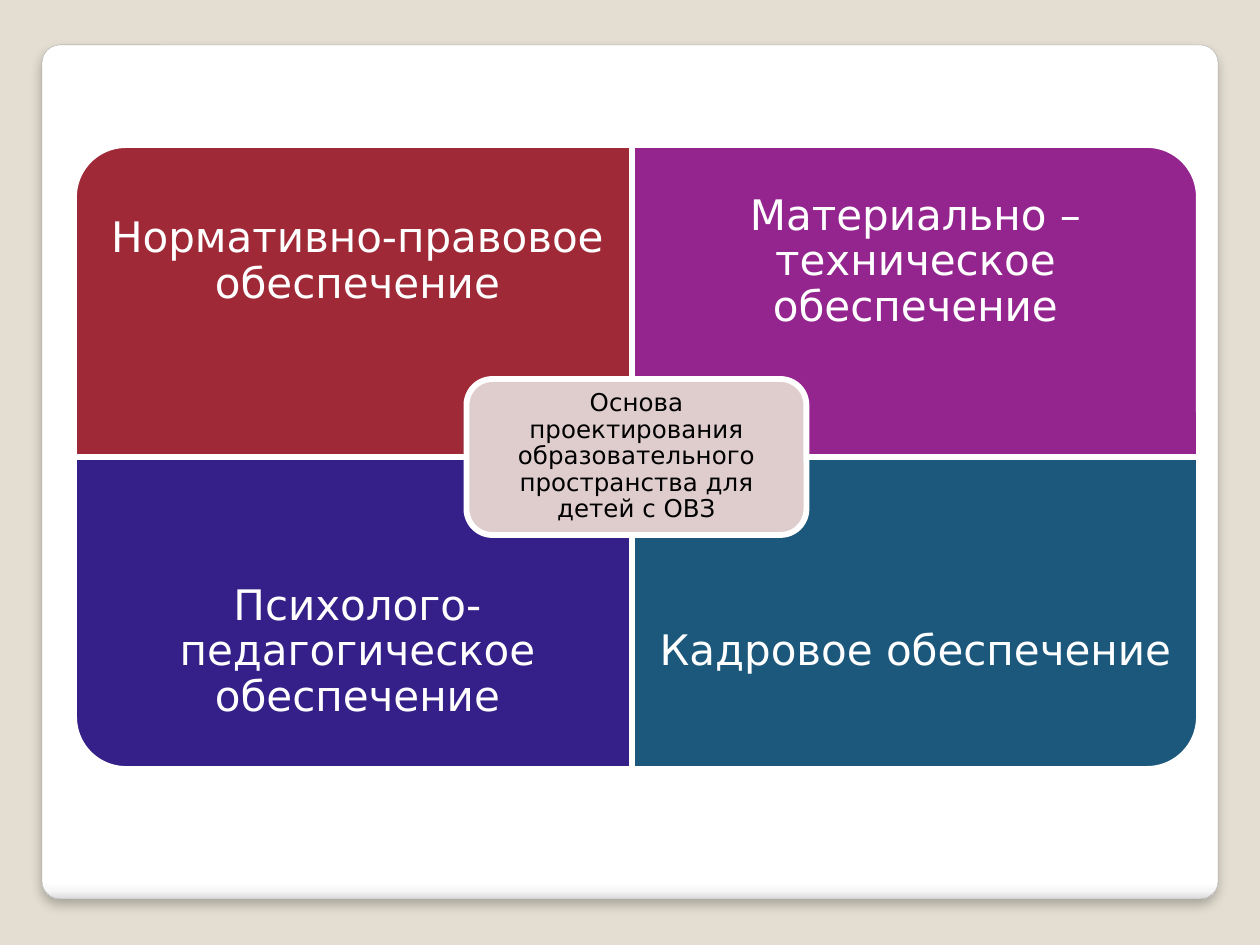
import pptx
import pptx.util
import pptx.dml.color
import pptx.enum.shapes
import pptx.enum.text
import pptx.oxml
import pptx.oxml.ns
from dataclasses import dataclass

SHAPE = pptx.enum.shapes.MSO_SHAPE
PX = 914400 / 126  # EMU in one px


@dataclass(frozen=True)
class Theme:
    font: str = "DejaVu Sans"
    background: str = "E3DED1"
    panel_stops: tuple = ((0, "FFFFFF"), (98, "FFFFFF"), (99, "F7F7F7"), (100, "DADADA"))
    panel_line: str = "A4A4A4"
    white: str = "FFFFFF"
    dark: str = "000000"
    center: str = "DFCDCE"
    quadrant_size: int = 24
    center_size: int = 14
    border: float = 3.35


THEME = Theme()

# Label, fill, column, row, rotation that turns the round corner outwards
QUADRANTS = [
    ("Нормативно-правовое обеспечение", "9F2936", 0, 0, 270),
    ("Материально – техническое обеспечение", "94248E", 1, 0, 0),
    ("Психолого-педагогическое обеспечение", "351F88", 0, 1, 180),
    ("Кадровое обеспечение", "1B587C", 1, 1, 90),
]


def px(n):
    return pptx.util.Emu(round(n * PX))


def rgb(color):
    return pptx.dml.color.RGBColor.from_string(color)


def xml(body):
    ns = pptx.oxml.ns.nsdecls("a")
    return pptx.oxml.parse_xml(body.replace(">", f" {ns}>", 1))


def add_box(slide, kind, box, fill, line, width):
    sp = slide.shapes.add_shape(kind, *map(px, box))
    sp.shadow.inherit = False
    sp.fill.solid()
    sp.fill.fore_color.rgb = rgb(fill)
    sp.line.color.rgb = rgb(line)
    sp.line.width = pptx.util.Pt(width)
    return sp


def write(sp, text, *, size, color, inset):
    tf = sp.text_frame
    tf.word_wrap = True
    tf.vertical_anchor = pptx.enum.text.MSO_ANCHOR.MIDDLE
    tf.margin_left = tf.margin_right = tf.margin_top = tf.margin_bottom = px(inset)
    p = tf.paragraphs[0]
    p.alignment = pptx.enum.text.PP_ALIGN.CENTER
    p.line_spacing = 0.9
    r = p.add_run()
    r.text = text
    r.font.name = THEME.font
    r.font.size = pptx.util.Pt(size)
    r.font.color.rgb = rgb(color)


def add_panel(slide, box):
    """White rounded panel with a shaded lower edge and a soft shadow."""
    sp = add_box(slide, SHAPE.ROUNDED_RECTANGLE, box, THEME.white, THEME.panel_line, 0.16)
    sp.adjustments[0] = 0.021
    sp.fill.gradient()
    sp.fill.gradient_angle = 270
    stops = sp.element.spPr.find(".//" + pptx.oxml.ns.qn("a:gsLst"))
    stops.clear()
    for pos, color in THEME.panel_stops:
        stops.append(xml(f'<a:gs pos="{pos * 1000}"><a:srgbClr val="{color}"/></a:gs>'))
    effects = sp.element.spPr.find(pptx.oxml.ns.qn("a:effectLst"))
    effects.append(xml(
        f'<a:outerShdw blurRad="{pptx.util.Pt(6)}" dist="{pptx.util.Pt(4)}" dir="5400000" '
        f'algn="t" rotWithShape="0"><a:srgbClr val="{THEME.dark}">'
        '<a:alpha val="25000"/></a:srgbClr></a:outerShdw>'))


def add_quadrant(slide, box, text, fill, rotation, at_bottom):
    """Coloured quarter; its label fills the three fourths away from the centre."""
    x, y, w, h = box
    # A quarter turn swaps the sides about the same middle
    sw, sh = (h, w) if rotation % 180 else (w, h)
    sp = add_box(slide, SHAPE.ROUND_1_RECTANGLE,
                 (x + (w - sw) / 2, y + (h - sh) / 2, sw, sh), fill, THEME.white, THEME.border)
    sp.rotation = rotation
    label_h = h * 3 / 4
    label_y = y + h - label_h if at_bottom else y
    label = slide.shapes.add_textbox(px(x), px(label_y), px(w), px(label_h))
    write(label, text, size=THEME.quadrant_size, color=THEME.white, inset=24)


def add_matrix(slide, box):
    """Four quadrants around a central card."""
    x, y, w, h = box
    cell_w, cell_h = 567, h // 2
    for text, fill, col, row, rotation in QUADRANTS:
        cell = (x + col * (w - cell_w), y + row * (h - cell_h), cell_w, cell_h)
        add_quadrant(slide, cell, text, fill, rotation, row == 1)

    # Central card
    card_w, card_h = 340, 156
    sp = add_box(slide, SHAPE.ROUNDED_RECTANGLE,
                 (x + (w - card_w) / 2, y + (h - card_h) / 2, card_w, card_h),
                 THEME.center, THEME.white, THEME.border)
    write(sp, "Основа проектирования образовательного пространства для детей с ОВЗ",
          size=THEME.center_size, color=THEME.dark, inset=8)


def main():
    prs = pptx.Presentation()
    prs.slide_width, prs.slide_height = px(1260), px(945)
    slide = prs.slides.add_slide(prs.slide_layouts[6])
    slide.background.fill.solid()
    slide.background.fill.fore_color.rgb = rgb(THEME.background)
    add_panel(slide, (42, 45, 1176, 854))
    add_matrix(slide, (74, 145, 1125, 624))
    prs.save("out.pptx")


if __name__ == "__main__":
    main()
